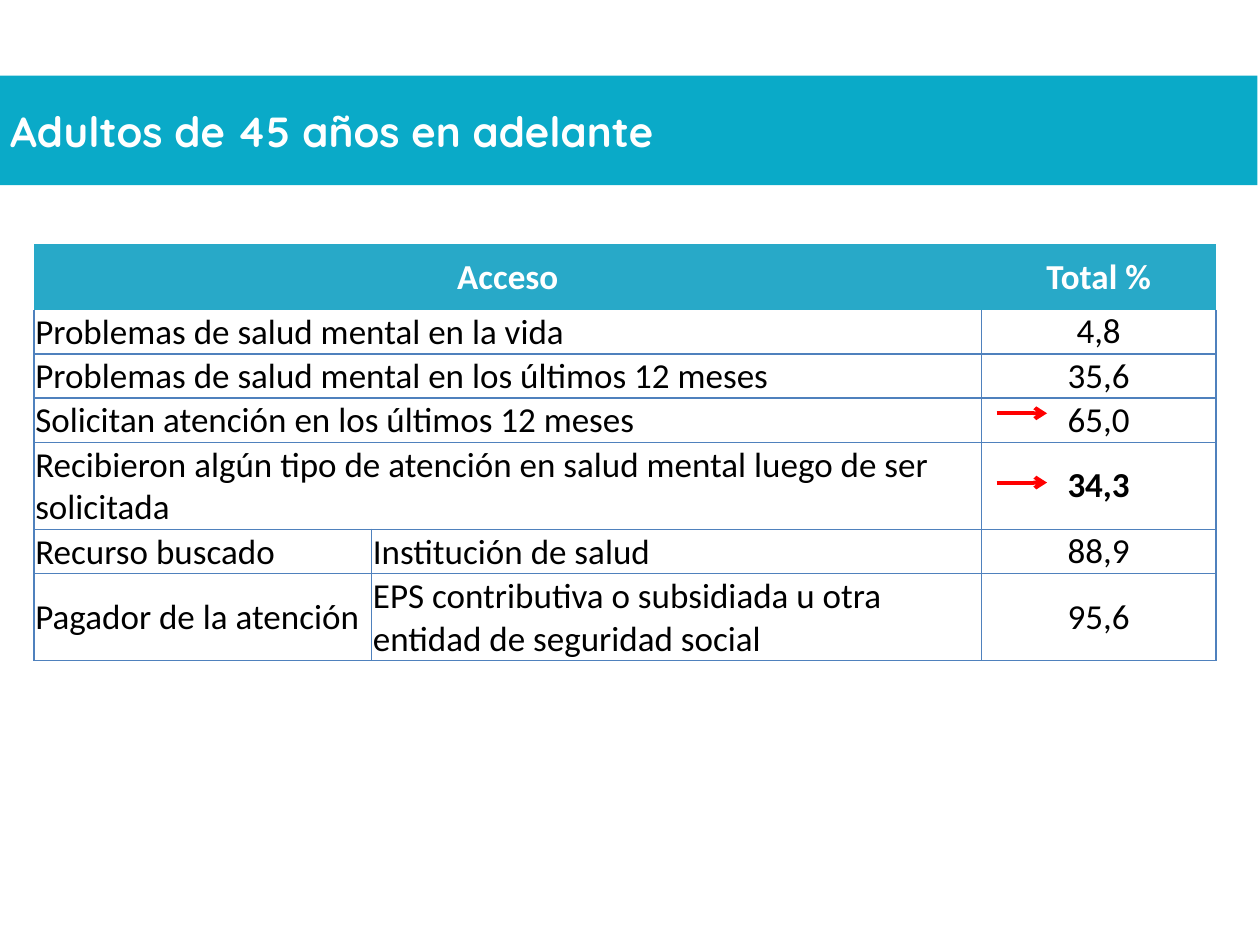
from lxml.etree import SubElement as Sub
from pptx import Presentation
from pptx.dml.color import RGBColor
from pptx.enum.shapes import MSO_CONNECTOR as Link
from pptx.enum.text import MSO_ANCHOR as Anchor, MSO_AUTO_SIZE as Auto, PP_ALIGN as Align
from pptx.oxml import parse_xml
from pptx.oxml.ns import nsdecls, qn
from pptx.util import Inches, Pt

ROWS = [
    ("Acceso", "", "Total %", 0.52),
    ("Problemas de salud mental en la vida", "", "4,8", 0.35),
    ("Problemas de salud mental en los últimos 12 meses", "", "35,6", 0.35),
    ("Solicitan atención en los últimos 12 meses", "", "65,0", 0.35),
    ("Recibieron algún tipo de atención en salud mental luego de ser solicitada", "", "34,3", 0.69),
    ("Recurso buscado", "Institución de salud", "88,9", 0.35),
    ("Pagador de la atención", "EPS contributiva o subsidiada u otra entidad de seguridad social", "95,6", 0.69),
]
COLS = (2.68, 4.84, 1.86)


def color(code):
    """Turn a hex string into a colour."""
    return RGBColor.from_string(code)


def style(par, face, size, code, bold, align):
    """Format a whole paragraph."""
    par.alignment = align
    font = par.font
    font.name, font.size, font.bold = face, Pt(size), bold
    font.color.rgb = color(code)


def add_title(slide, text, left, top, width, height):
    """Place the title as a full-width band."""
    title = slide.shapes.title
    title.left, title.top = Inches(left), Inches(top)
    title.width, title.height = Inches(width), Inches(height)
    title.fill.solid()
    title.fill.fore_color.rgb = color("0AAAC8")
    frame = title.text_frame
    frame.text = text
    frame.auto_size = Auto.NONE
    frame.vertical_anchor = Anchor.MIDDLE
    style(frame.paragraphs[0], "Quicksand", 24, "FFFFFF", True, Align.LEFT)


def add_edges(cell, sides, code):
    """Draw the named cell borders and hide the others."""
    props = cell._tc.get_or_add_tcPr()
    for spot, side in enumerate("LRTB"):
        paint = f'<a:solidFill><a:srgbClr val="{code}"/></a:solidFill>' if side in sides else "<a:noFill/>"
        props.insert(spot, parse_xml(f'<a:ln{side} {nsdecls("a")} w="12700">{paint}</a:ln{side}>'))


def fill_cell(cell, text, row, col):
    """Write and format one cell by its row and column."""
    head, total = row == 0, col == 2
    cell.text = text
    side = 0.07 if total and not head else 0.01
    cell.margin_left = cell.margin_right = Inches(side)
    cell.margin_top = Inches(0 if total and not head else 0.01)
    cell.margin_bottom = 0
    low = not head and not total and (col == 1 or row < 5)
    cell.vertical_anchor = Anchor.BOTTOM if low else Anchor.MIDDLE
    if head:
        cell.fill.solid()
        cell.fill.fore_color.rgb = color("28A9C8")
    else:
        cell.fill.background()
    style(cell.text_frame.paragraphs[0], "Calibri", 20, "FFFFFF" if head else "000000",
          head or text == "34,3", Align.CENTER if head or total else Align.LEFT)
    add_edges(cell, "" if head else "LRB" if row == 1 else "LRTB", "4F81BD")


def add_grid(slide, left, top):
    """Place the table of access figures."""
    high = sum(row[-1] for row in ROWS)
    frame = slide.shapes.add_table(len(ROWS), len(COLS), Inches(left), Inches(top),
                                   Inches(sum(COLS)), Inches(high))
    table = frame.table
    table.first_row = table.horz_banding = False
    for col, width in zip(table.columns, COLS):
        col.width = Inches(width)
    for row, (*texts, height) in enumerate(ROWS):
        table.rows[row].height = Inches(height)
        for col, text in enumerate(texts):
            fill_cell(table.cell(row, col), text, row, col)
        if not texts[1]:
            table.cell(row, 0).merge(table.cell(row, 1))


def add_arrow(slide, left, top, width):
    """Place a red arrow that points right."""
    arrow = slide.shapes.add_connector(Link.STRAIGHT, Inches(left), Inches(top),
                                       Inches(left + width), Inches(top))
    arrow.line.color.rgb = color("FF0000")
    arrow.line.width = Pt(2.25)
    Sub(arrow.line._get_or_add_ln(), qn("a:tailEnd"), type="arrow")
    Sub(arrow._element.spPr, qn("a:effectLst"))


def main():
    """Build and save the slide."""
    deck = Presentation()
    deck.slide_width, deck.slide_height = Inches(10), Inches(7.5)
    slide = deck.slides.add_slide(deck.slide_layouts[5])
    add_title(slide, "Adultos de 45 años en adelante", -0.02, 0.6, 10, 0.87)
    add_grid(slide, 0.27, 1.94)
    for top in (3.83, 3.28):
        add_arrow(slide, 7.91, top, 0.4)
    deck.save("out.pptx")


if __name__ == "__main__":
    main()
